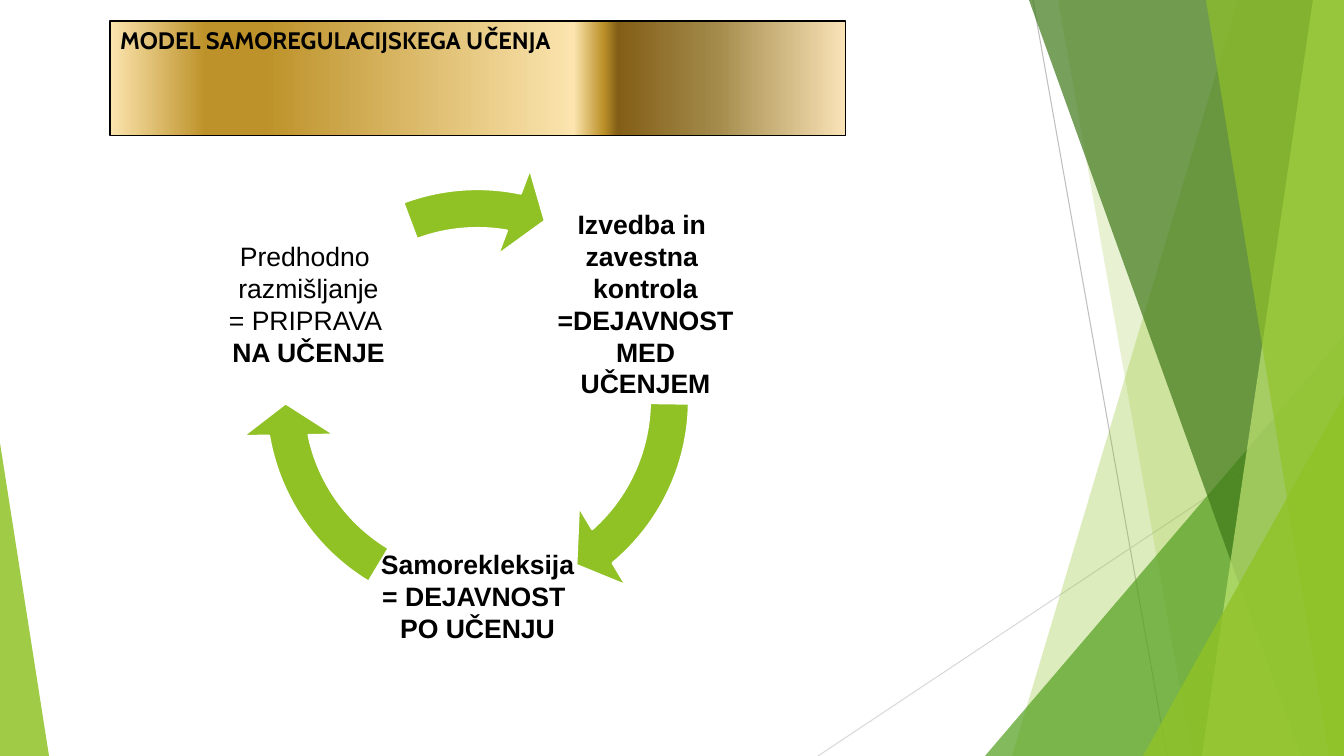
"""Build the slide on the model of self-regulated learning."""
from lxml import etree
from pptx import Presentation
from pptx.dml.color import RGBColor
from pptx.enum import shapes, text
from pptx.oxml import ns
from pptx.util import Emu, Pt

W, H = 1344, 756
PX = 914400 / 100.8
HUES = {
    "lime": "90C226", "leaf": "54A021", "dark": "3F7819", "pale": "C0E474",
    "gray": "BFBFBF", "mist": "D9D9D9", "black": "000000", "white": "FFFFFF",
    "cream": "FBE4AE", "gold": "BD922A", "brown": "835E17",
    "sand": "A28949", "peach": "FAE3B7",
}
TITLE = "MODEL SAMOREGULACIJSKEGA UČENJA"
BAR = (110, 21, 736, 115)
STOPS = [(0, "cream"), (13, "gold"), (21, "gold"), (63, "cream"),
         (67, "gold"), (69, "brown"), (82, "sand"), (100, "peach")]
RAYS = [((1033, 0), (1167, H), "gray"), ((W, 406), (818, H), "mist")]
# top x, bottom x, hue, opacity; or box, tip, hue, opacity
DECOR = [
    (1238, 1012, "lime", 30),
    (1058, 1192, "lime", 20),
    ((985, 336, 359, 420), 1, "leaf", 72),
    (1029, 1301, "dark", 70),
    (1313, 1202, "pale", 70),
    (1206, 1329, "lime", 65),
    ((1143, 396, 201, 360), 1, "lime", 80),
    ((0, 443, 49, 313), 0, "lime", 85),
]
RING = (240, 163, 475, 475)
SIDE = 201
STEPS = [
    ((545, 203), ["Izvedba in ", "zavestna ", "kontrola", "=DEJAVNOST", "MED UČENJEM"],
     0, (29.636, 0.519)),
    ((377, 495), ["Samorekleksija", "= DEJAVNOST ", "PO UČENJU"],
     0, (101.72, 72.602)),
    ((208, 203), ["Predhodno ", "razmišljanje", "= PRIPRAVA ", "NA UČENJE"],
     3, (168.565, 149.673)),
]


def px(*nums):
    return [Emu(round(n * PX)) for n in nums]


def rgb(hue):
    return RGBColor.from_string(HUES[hue])


def sub(node, tag, **attrs):
    return etree.SubElement(node, ns.qn(tag), **attrs)


def paint(shape, hue, alpha=100):
    shape.shadow.inherit = False
    shape.fill.solid()
    shape.fill.fore_color.rgb = rgb(hue)
    shape.line.fill.background()
    if alpha < 100:
        tone = shape.fill._xPr.find(ns.qn("a:solidFill"))[0]
        sub(tone, "a:alpha", val=str(alpha * 1000))


def edge(shape, hue, width):
    shape.line.color.rgb = rgb(hue)
    shape.line.width = Pt(width)


def style(para, size, face, bold):
    font = para.font
    font.size, font.name, font.bold = Pt(size), face, bold
    font.color.rgb = rgb("black")


def backdrop(items):
    for start, end, hue in RAYS:
        ray = items.add_connector(shapes.MSO_CONNECTOR.STRAIGHT, *px(*start, *end))
        edge(ray, hue, 0.75)
        sub(ray._element.spPr, "a:effectLst")
    for place, tip, hue, alpha in DECOR:
        if isinstance(place, tuple):
            part = items.add_shape(shapes.MSO_SHAPE.ISOSCELES_TRIANGLE, *px(*place))
            part.adjustments[0] = tip
        else:
            pen = items.build_freeform(place, 0, scale=PX)
            pen.add_line_segments([(W, 0), (W, H), (tip, H)])
            part = pen.convert_to_shape()
        paint(part, hue, alpha)


def heading(bar):
    bar.left, bar.top, bar.width, bar.height = px(*BAR)
    bar.fill.gradient()
    bar.fill.gradient_angle = 0
    stops = bar.fill._xPr.find(".//" + ns.qn("a:gsLst"))
    for old in list(stops):
        stops.remove(old)
    for pos, hue in STOPS:
        stop = sub(stops, "a:gs", pos=str(pos * 1000))
        sub(stop, "a:srgbClr", val=HUES[hue])
    edge(bar, "black", 0.75)
    frame = bar.text_frame
    frame.text = TITLE
    frame.vertical_anchor = text.MSO_ANCHOR.TOP
    para = frame.paragraphs[0]
    para.alignment = text.PP_ALIGN.LEFT
    style(para, 17, "Cabin", True)


def cycle(items):
    for spot, lines, plain, angles in STEPS:
        frame = items.add_textbox(*px(*spot, SIDE, SIDE)).text_frame
        frame.word_wrap = True
        frame.vertical_anchor = text.MSO_ANCHOR.MIDDLE
        frame.margin_left, frame.margin_top, frame.margin_right, frame.margin_bottom = px(3, 3, 3, 3)
        frame.text = "\n".join(lines)
        for row, para in enumerate(frame.paragraphs):
            para.alignment = text.PP_ALIGN.CENTER
            style(para, 19, "Arial", row >= plain)
        arrow = items.add_shape(shapes.MSO_SHAPE.CIRCULAR_ARROW, *px(*RING))
        for slot, value in enumerate((0.082, 5.762, *angles, 0.096)):
            arrow.adjustments[slot] = value
        paint(arrow, "lime")
        edge(arrow, "white", 1.5)


def main():
    deck = Presentation()
    deck.slide_width, deck.slide_height = px(W, H)
    slide = deck.slides.add_slide(deck.slide_layouts[5])
    backdrop(slide.shapes)
    heading(slide.shapes.title)
    cycle(slide.shapes)
    deck.save("out.pptx")


if __name__ == "__main__":
    main()
